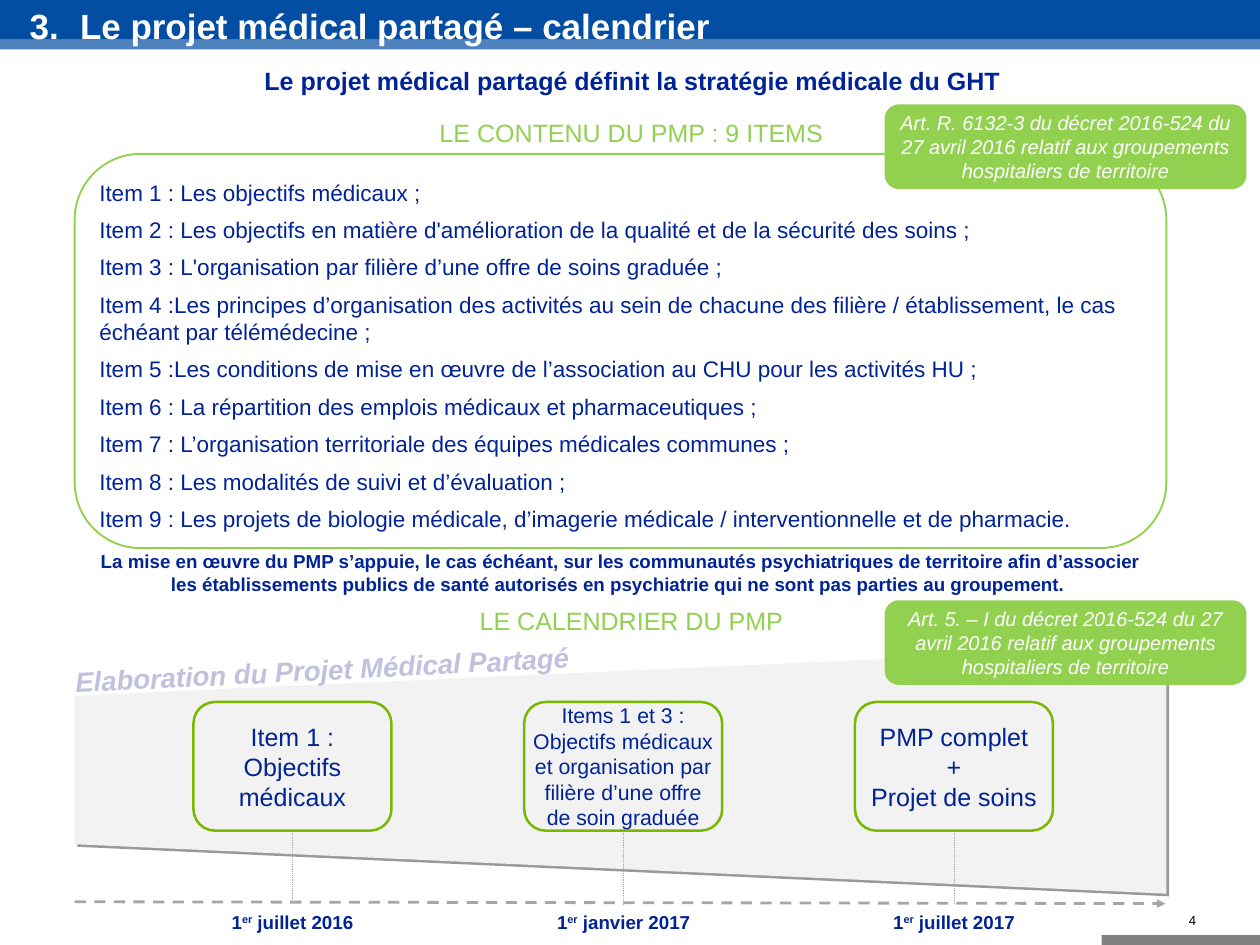
from lxml import etree
from pptx import Presentation, util as u
from pptx.dml.color import RGBColor
from pptx.enum import dml, shapes, text
from pptx.oxml import parse_xml
from pptx.oxml.ns import nsdecls, qn

COLOURS = {
    "blue": "034EA2", "navy": "002395", "green": "92D050", "box": "7AB800",
    "white": "FFFFFF", "black": "000000", "grey": "808080",
    "rule": "A6A6A6", "pale": "F2F2F2",
}
GRADIENT = [(29, "9597CC"), (50, "C0C1DE"), (100, "E0E1EE")]
PADDED = (0.14, 0.07, 0.14, 0.07)
NONE = (0, 0, 0, 0)
RECT = shapes.MSO_SHAPE.RECTANGLE
ROUND = shapes.MSO_SHAPE.ROUNDED_RECTANGLE
LEFT, CENTER, RIGHT = text.PP_ALIGN.LEFT, text.PP_ALIGN.CENTER, text.PP_ALIGN.RIGHT
TOP, MIDDLE = text.MSO_ANCHOR.TOP, text.MSO_ANCHOR.MIDDLE


def colour(name):
    return RGBColor.from_string(COLOURS[name])


def drawing(tag, attributes, body):
    """Build one DrawingML element from its tag, attribute text and inner XML."""
    return parse_xml(f'<a:{tag} {nsdecls("a")} {attributes}>{body}</a:{tag}>')


class SlideBuilder:
    def __init__(self, slide, font="Arial"):
        self.slide = slide
        self.font = font

    def shape(self, box, kind=RECT, fill=None, line=None, width=1):
        shape = self.slide.shapes.add_shape(kind, *map(u.Inches, box))
        shape.shadow.inherit = False
        if fill:
            shape.fill.solid()
            shape.fill.fore_color.rgb = colour(fill)
        else:
            shape.fill.background()
        if line:
            shape.line.color.rgb = colour(line)
            shape.line.width = u.Pt(width)
        else:
            shape.line.fill.background()
        return shape

    def text_box(self, box, paragraphs, **style):
        shape = self.slide.shapes.add_textbox(*map(u.Inches, box))
        return self.set_text(shape, paragraphs, **style)

    def set_text(self, shape, paragraphs, size, color="navy", align=CENTER, anchor=TOP,
                 insets=PADDED, before=0, **font):
        """Fill a shape; a paragraph is a string or a list of (text, is superscript)."""
        frame = shape.text_frame
        sides = ("left", "top", "right", "bottom")
        layout = {f"margin_{side}": u.Inches(inset) for side, inset in zip(sides, insets)}
        layout.update(word_wrap=True, vertical_anchor=anchor)
        for name, value in layout.items():
            setattr(frame, name, value)
        font = {"name": self.font, "size": u.Pt(size), **font}
        for index, content in enumerate(paragraphs):
            paragraph = frame.paragraphs[0] if index == 0 else frame.add_paragraph()
            paragraph.alignment = align
            paragraph.space_before = u.Pt(before)
            for words, raised in [(content, False)] if isinstance(content, str) else content:
                run = paragraph.add_run()
                run.text = words
                for name, value in font.items():
                    setattr(run.font, name, value)
                run.font.color.rgb = colour(color)
                if raised:
                    run.font._element.set("baseline", "30000")
        return shape

    def heading(self, box, words):
        """Green section heading with a thin outline on its letters."""
        shape = self.text_box(box, [words], size=20, color="green")
        outline = drawing("ln", f'w="{u.Pt(0.71)}"',
                          f'<a:solidFill><a:srgbClr val="{COLOURS["green"]}"/></a:solidFill>')
        shape.text_frame.paragraphs[0].runs[0].font._element.insert(0, outline)

    def callout(self, top, words):
        shape = self.shape((9.83, top, 4.02, 0.94), ROUND, fill="green")
        self.set_text(shape, [words], size=16, color="white", anchor=MIDDLE,
                      insets=(0.1, 0.05, 0.1, 0.05), italic=True)

    def connector(self, start, end, width, dash, source=None, arrow=False):
        line = self.slide.shapes.add_connector(
            shapes.MSO_CONNECTOR.STRAIGHT, *map(u.Inches, (*start, *end)))
        if source is not None:
            line.begin_connect(source, 2)
        line.line.color.rgb = colour("rule")
        line.line.width = u.Pt(width)
        line.line.dash_style = dash
        properties = line._element.spPr
        if arrow:
            etree.SubElement(properties.find(qn("a:ln")), qn("a:tailEnd"), type="triangle")
        etree.SubElement(properties, qn("a:effectLst"))


def add_banner(builder):
    strip = builder.shape((0, 0.44, 14, 0.11), fill="blue")
    strip_colour = strip._element.spPr.find(".//" + qn("a:srgbClr"))
    etree.SubElement(strip_colour, qn("a:alpha"), val="70000")
    builder.shape((0, 0, 14, 0.44), fill="blue")
    builder.shape((12.24, 10.39, 1.76, 0.11), fill="grey")
    builder.text_box((11.57, 10.13, 1.76, 0.18), ["4"], size=10.5, color="black",
                     align=RIGHT, anchor=MIDDLE, insets=(0.04, 0, 0.04, 0))
    title = builder.text_box((0.33, 0.05, 13.4, 0.46),
                             ["Le projet médical partagé – calendrier"], size=28,
                             color="white", align=LEFT, anchor=MIDDLE, insets=NONE, bold=True)
    properties = title.text_frame.paragraphs[0]._p.get_or_add_pPr()
    indent = u.Inches(0.56)
    properties.set("marL", str(indent))
    properties.set("indent", str(-indent))
    etree.SubElement(properties, qn("a:buAutoNum"), type="arabicPeriod", startAt="3")


def add_calendar(builder):
    funnel = builder.shape((5.52, 2.49, 2.75, 12.13),
                           shapes.MSO_SHAPE.FLOWCHART_MANUAL_OPERATION, fill="pale")
    funnel.rotation = 90
    funnel._element.spPr.find(qn("a:effectLst")).append(drawing(
        "outerShdw", f'dist="{u.Pt(3)}" dir="2700000" algn="tl" rotWithShape="0"',
        '<a:srgbClr val="000000"><a:alpha val="40000"/></a:srgbClr>'))

    label = builder.text_box((0.69, 7.02, 12.25, 0.52),
                             ["Elaboration du Projet Médical Partagé"],
                             size=22, align=LEFT, bold=True, italic=True)
    label.rotation = 357.1
    stops = "".join(f'<a:gs pos="{position}000"><a:srgbClr val="{value}"/></a:gs>'
                    for position, value in GRADIENT)
    run_properties = label.text_frame.paragraphs[0].runs[0].font._element
    run_properties.replace(
        run_properties.find(qn("a:solidFill")),
        drawing("gradFill", "", f'<a:gsLst>{stops}</a:gsLst><a:lin ang="2700000" scaled="0"/>'))

    # words, text size, date, left and width of the date, bottom of the dotted line
    milestones = [
        (["Item 1 : Objectifs médicaux"], 20, "juillet 2016", 2.34, 1.82, 9.99),
        (["Items 1 et 3 : Objectifs médicaux et organisation par filière d’une offre "
          "de soin graduée"], 17, "janvier 2017", 6, 1.86, 10.05),
        (["PMP complet", "+", "Projet de soins"], 20, "juillet 2017", 9.72, 1.76, 10.04),
    ]
    for index, (words, size, date, left, width, bottom) in enumerate(milestones):
        box_left = 2.15 + 3.675 * index
        date_box = builder.shape((left, 10.05, width, 0.39), fill="white")
        builder.set_text(date_box, [[("1", False), ("er", True), (f" {date}", False)]],
                         size=15, bold=True)
        box = builder.shape((box_left, 7.8, 2.2, 1.43), ROUND, line="box", width=2)
        builder.set_text(box, words, size=size, anchor=MIDDLE, insets=NONE)
        middle = box_left + 1.1
        builder.connector((middle, 9.23), (middle, bottom), 0.75,
                          dml.MSO_LINE.ROUND_DOT, source=box)
    builder.connector((0.83, 10.02), (12.95, 10.04), 2.25, dml.MSO_LINE.DASH, arrow=True)


def add_content(builder):
    note = builder.shape((0.83, 6.04, 12.13, 0.64), fill="white")
    builder.set_text(note, [
        "La mise en œuvre du PMP s’appuie, le cas échéant, sur les communautés psychiatriques "
        "de territoire afin d’associer les établissements publics de santé autorisés en "
        "psychiatrie qui ne sont pas parties au groupement. "], size=15, bold=True)
    items = builder.shape((0.83, 1.71, 12.13, 4.38), ROUND, line="green", width=1.5)
    builder.set_text(items, [
        "Item 1 : Les objectifs médicaux ;",
        "Item 2 : Les objectifs en matière d'amélioration de la qualité et de la sécurité "
        "des soins ;",
        "Item 3 : L'organisation par filière d’une offre de soins graduée ;",
        "Item 4 :Les principes d’organisation des activités au sein de chacune des filière / "
        "établissement, le cas échéant par télémédecine ;",
        "Item 5 :Les conditions de mise en œuvre de l’association au CHU pour les activités HU ;",
        "Item 6 : La répartition des emplois médicaux et pharmaceutiques ;",
        "Item 7 : L’organisation territoriale des équipes médicales communes ;",
        "Item 8 : Les modalités de suivi et d’évaluation ;",
        "Item 9 : Les projets de biologie médicale, d’imagerie médicale / interventionnelle "
        "et de pharmacie.",
    ], size=18, align=LEFT, insets=(0.06,) * 4, before=8.4)


def main():
    presentation = Presentation()
    presentation.slide_width = u.Inches(14)
    presentation.slide_height = u.Inches(10.5)
    builder = SlideBuilder(presentation.slides.add_slide(presentation.slide_layouts[6]))
    add_banner(builder)
    builder.text_box((0.33, 0.68, 13.4, 0.44),
                     ["Le projet médical partagé définit la stratégie médicale du GHT"],
                     size=20, insets=(0.1, 0.05, 0.1, 0.05), bold=True)
    add_calendar(builder)
    add_content(builder)
    builder.heading((1.43, 1.23, 11.17, 0.48), "LE CONTENU DU PMP : 9 ITEMS")
    builder.heading((-1.38, 6.66, 16.79, 0.48), "LE CALENDRIER DU PMP")
    decree = "du décret 2016-524 du 27 avril 2016 relatif aux groupements hospitaliers de territoire"
    builder.callout(6.67, f"Art. 5. – I {decree}")
    builder.callout(1.16, f"Art. R. 6132-3 {decree}")
    presentation.save("out.pptx")


if __name__ == "__main__":
    main()
